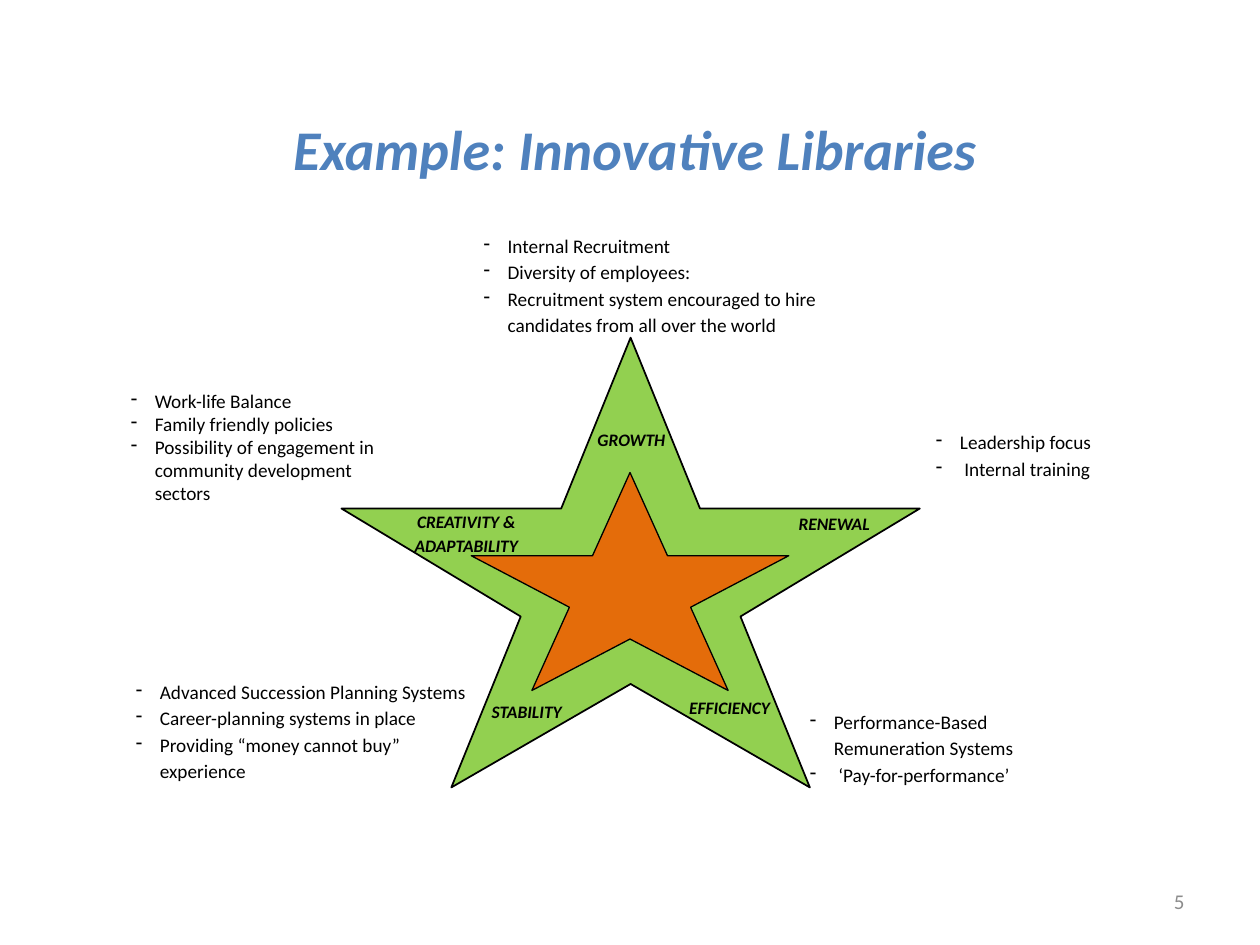
from lxml.etree import SubElement
from pptx import Presentation
from pptx.dml.color import RGBColor
from pptx.enum.shapes import MSO_SHAPE as Shape
from pptx.enum.text import MSO_ANCHOR as Anchor, MSO_AUTO_SIZE as AutoSize, PP_ALIGN as Align
from pptx.oxml.ns import qn
from pptx.util import Inches, Pt

WIDTH, HEIGHT = Inches(10), Inches(7.5)
COLORS = {"text": "000000", "title": "4F81BD", "number": "8C8C8C",
          "outer": "92D050", "inner": "E46C0A"}

TITLE_BOX = (5.4, 11.47, 90, 5.2)
NUMBER_BOX = (71.7, 92.67, 23.3, 5.33)
OUTER_BOX = (27.1, 35.73, 45.9, 47.6)
INNER_BOX = (37.4, 50, 25.2, 23.07)
LABEL_SIZE = (17.2, 8.13)
STAR_HALF = [(0.5, 0), (0.38, 0.38), (0, 0.38), (0.31, 0.62), (0.19, 1), (0.5, 0.77)]

PRACTICES = [
    ((37.4, 23.73, 29.2, 13.6), 1.15,
     ["Internal Recruitment", "Diversity of employees:",
      "Recruitment system encouraged to hire candidates from all over the world"]),
    ((73.3, 44.53, 25.2, 23.33), 1.15, ["Leadership focus", " Internal training"]),
    ((63.3, 74.13, 20.5, 14.4), 1.15,
     ["Performance-Based Remuneration Systems", " ‘Pay-for-performance’"]),
    ((9.4, 40.53, 23.3, 14.67), 1.0,
     ["Work-life Balance", "Family friendly policies",
      "Possibility of engagement in community development sectors"]),
    ((9.8, 70.93, 29.5, 15.73), 1.15,
     ["Advanced Succession Planning Systems", "Career-planning systems in place",
      "Providing “money cannot buy” experience"]),
]
GOALS = [("GROWTH", 41.5, 44.4), ("RENEWAL", 57.6, 53.33), ("EFFICIENCY", 49.3, 72.8),
         ("STABILITY", 33.2, 73.2), ("CREATIVITY & ADAPTABILITY", 28.4, 53.07)]


def place(box):
    """Turn a box in percent of the slide into lengths."""
    return [round(share * side / 100) for share, side in zip(box, (WIDTH, HEIGHT) * 2)]


def style(paragraph, size, color, strong=False, align=Align.LEFT, spacing=1.0):
    """Format a paragraph and its runs."""
    paragraph.alignment = align
    paragraph.line_spacing = spacing
    for run in paragraph.runs:
        font = run.font
        font.name, font.size = "Calibri", Pt(size)
        font.bold = font.italic = strong
        font.color.rgb = RGBColor.from_string(COLORS[color])


def add_frame(slide, box, text):
    """Add a wrapping text box and return its frame."""
    frame = slide.shapes.add_textbox(*place(box)).text_frame
    frame.word_wrap = True
    frame.text = text
    return frame


def add_title(slide, box, text):
    """Move and format the title placeholder."""
    title = slide.shapes.title
    title.left, title.top, title.width, title.height = place(box)
    frame = title.text_frame
    frame.text = text
    frame.auto_size = AutoSize.NONE
    frame.vertical_anchor = Anchor.TOP
    style(frame.paragraphs[0], 32, "title", True, Align.CENTER)


def add_practices(slide, box, spacing, practices):
    """Add a dashed list of practices."""
    for paragraph in add_frame(slide, box, "\n".join(practices)).paragraphs:
        properties = paragraph._p.get_or_add_pPr()
        properties.set("marL", str(Inches(0.19)))
        properties.set("indent", str(-Inches(0.19)))
        SubElement(properties, qn("a:buChar")).set("char", "-")
        style(paragraph, 11, "text", spacing=spacing)


def add_goal(slide, box, goal):
    """Add a goal label on an arm of the star."""
    paragraph = add_frame(slide, box, goal).paragraphs[0]
    style(paragraph, 10, "text", True, Align.CENTER, 1.15)


def paint(star, color, line_width):
    """Fill and outline a star."""
    star.shadow.inherit = False
    star.fill.solid()
    star.fill.fore_color.rgb = RGBColor.from_string(COLORS[color])
    star.line.color.rgb = RGBColor.from_string(COLORS["text"])
    star.line.width = Pt(line_width)


def add_outer_star(slide, box):
    """Draw the large star by mirroring its left half."""
    left, top, width, height = place(box)
    mirrored = [(1 - x, y) for x, y in reversed(STAR_HALF[1:-1])]
    corners = [(left + x * width, top + y * height) for x, y in STAR_HALF + mirrored]
    builder = slide.shapes.build_freeform(*corners[0])
    builder.add_line_segments(corners[1:], close=True)
    paint(builder.convert_to_shape(), "outer", 1)


def add_number(slide, box, number):
    """Add the slide number at the lower right."""
    frame = add_frame(slide, box, number)
    frame.vertical_anchor = Anchor.MIDDLE
    style(frame.paragraphs[0], 12, "number", align=Align.RIGHT)


def main():
    """Build and save the slide."""
    deck = Presentation()
    deck.slide_width, deck.slide_height = WIDTH, HEIGHT
    slide = deck.slides.add_slide(deck.slide_layouts[5])
    add_title(slide, TITLE_BOX, "Example: Innovative Libraries")
    add_outer_star(slide, OUTER_BOX)
    for box, spacing, practices in PRACTICES:
        add_practices(slide, box, spacing, practices)
    for goal, left, top in GOALS:
        add_goal(slide, (left, top, *LABEL_SIZE), goal)
    paint(slide.shapes.add_shape(Shape.STAR_5_POINT, *place(INNER_BOX)), "inner", 0.75)
    add_number(slide, NUMBER_BOX, "5")
    deck.save("out.pptx")


if __name__ == "__main__":
    main()
